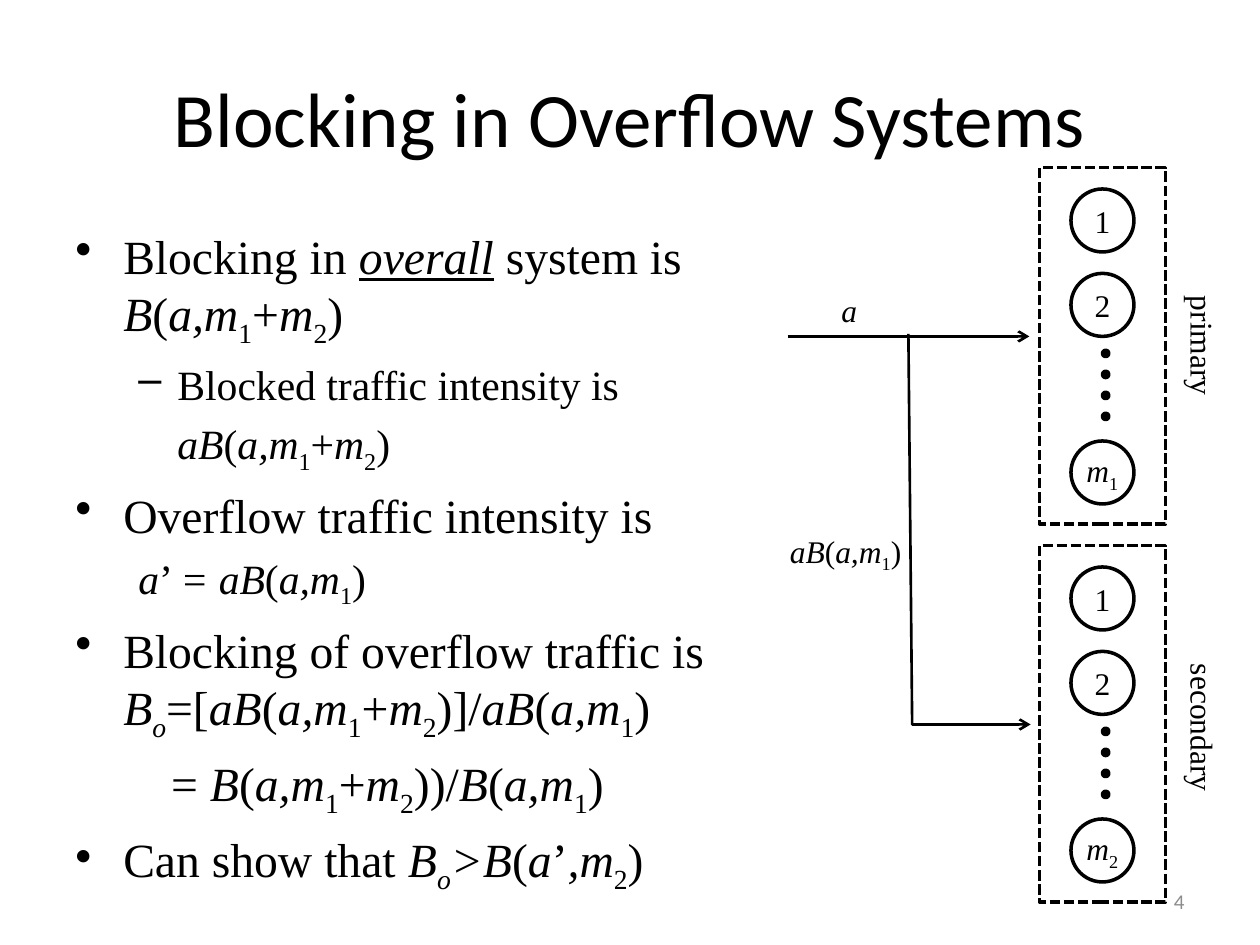
"""Build the slide on blocking in overflow systems."""
import pptx
import pptx.chart.data
import pptx.dml.color
import pptx.enum.dml
import pptx.enum.shapes
import pptx.enum.text
import pptx.oxml
import pptx.oxml.ns
import pptx.util
from dataclasses import dataclass

Inches = pptx.util.Inches
Pt = pptx.util.Pt
ALIGN = pptx.enum.text.PP_ALIGN
ANCHOR = pptx.enum.text.MSO_ANCHOR
SHAPE = pptx.enum.shapes.MSO_SHAPE


@dataclass(frozen=True)
class Theme:
    ink: str = "000000"
    paper: str = "FFFFFF"
    muted: str = "8C8C8C"
    heading: str = "Calibri"
    serif: str = "Times New Roman"
    title: float = 44
    point: float = 27.2
    detail: float = 23.8
    label: float = 18
    number: float = 12
    outline: float = 2
    arrow: float = 1.5


THEME = Theme()

TITLE = "Blocking in Overflow Systems"
PRIMARY = [("(", ""), ("a,m", "i"), ("1", "s"), (")", "")]
TOTAL = [("(", ""), ("a,m", "i"), ("1", "s"), ("+", ""), ("m", "i"), ("2", "s")]
B = ("B", "i")
AB = ("aB", "i")
B_OVERFLOW = [B, ("o", "is")]

POINTS = [
    ("•", THEME.point, 0.38, -0.38,
     [("Blocking in ", ""), ("overall", "iu"), (" system is ", ""), B, *TOTAL, (")", "")]),
    ("–", THEME.detail, 0.81, -0.31, [("Blocked traffic intensity is", "")]),
    (None, THEME.detail, 0.81, 0, [AB, *TOTAL, (")", "")]),
    ("•", THEME.point, 0.38, -0.38, [("Overflow traffic intensity is", "")]),
    (None, THEME.detail, 0.5, 0, [("a", "i"), ("’ ", ""), ("= aB", "i"), *PRIMARY]),
    ("•", THEME.point, 0.38, -0.38,
     [("Blocking of overflow traffic is ", ""), *B_OVERFLOW, ("=[", ""), AB, *TOTAL,
      (")]/", ""), AB, *PRIMARY]),
    (None, THEME.point, 0.76, 0,
     [("=", ""), (" B", "i"), *TOTAL, ("))/", ""), B, *PRIMARY]),
    ("•", THEME.point, 0.38, -0.38,
     [("Can show that ", ""), *B_OVERFLOW, (">B", "i"), ("(", ""), ("a", "i"),
      ("’", ""), (",m", "i"), ("2", "s"), (")", "")]),
]

SERVER_GROUPS = [("1", 1.33), ("2", 4.33)]
LABELS = [
    ((6.58, 2.26, 0.5, 0.4), [("a", "i")], False),
    ((6.17, 4.17, 1.25, 0.4), [AB, *PRIMARY], False),
    ((9.25, 2.25, 0.5, 1), [("primary", "")], True),
    ((9.25, 5.17, 0.5, 1.25), [("secondary", "")], True),
]
ARRIVALS = (6.25, 2.67, 8.17, 2.67)
OVERFLOW = [(7.21, 2.65), (7.24, 5.75), (8.18, 5.75)]


def rgb(value):
    return pptx.dml.color.RGBColor.from_string(value)


def add_runs(para, runs, size, font=THEME.serif, color=THEME.ink):
    for text, style in runs:
        span = para.add_run()
        span.text = text
        span.font.name = font
        span.font.size = Pt(size)
        span.font.color.rgb = rgb(color)
        span.font.italic = "i" in style
        span.font.underline = "u" in style
        if "s" in style:
            span.font._element.set("baseline", "-25000")


def add_text(page, place, runs, size, align=ALIGN.LEFT, anchor=ANCHOR.TOP, **look):
    box = page.shapes.add_textbox(*map(Inches, place))
    frame = box.text_frame
    frame.word_wrap = True
    frame.vertical_anchor = anchor
    frame.paragraphs[0].alignment = align
    add_runs(frame.paragraphs[0], runs, size, **look)
    return box


def add_points(page):
    frame = add_text(page, (0.5, 1.75, 5.75, 5.42), [], THEME.point).text_frame
    for index, (bullet, size, margin, indent, runs) in enumerate(POINTS):
        para = frame.add_paragraph() if index else frame.paragraphs[0]
        para.space_before = Pt(round(size * 0.23, 1))
        props = para._p.get_or_add_pPr()
        props.set("marL", str(Inches(margin)))
        props.set("indent", str(Inches(indent)))
        if bullet:
            mark = pptx.oxml.parse_xml(
                f'<a:buChar {pptx.oxml.ns.nsdecls("a")} char="{bullet}"/>')
            props.append(mark)
        add_runs(para, runs, size)


def add_outlined(group, kind, place, fill=None):
    shape = group.shapes.add_shape(kind, *map(Inches, place))
    shape.shadow.inherit = False
    if fill:
        shape.fill.solid()
        shape.fill.fore_color.rgb = rgb(fill)
    else:
        shape.fill.background()
    shape.line.color.rgb = rgb(THEME.ink)
    shape.line.width = Pt(THEME.outline)
    return shape


def add_servers(page, subscript, top):
    group = page.shapes.add_group_shape()
    servers = [([("1", "")], 0.17), ([("2", "")], 0.84),
               ([("m", "i"), (subscript, "s")], 2.17)]
    for runs, drop in servers:
        server = add_outlined(group, SHAPE.OVAL, (8.5, top + drop, 0.5, 0.5), THEME.paper)
        frame = server.text_frame
        frame.margin_left = frame.margin_right = 0
        frame.vertical_anchor = ANCHOR.MIDDLE
        frame.paragraphs[0].alignment = ALIGN.CENTER
        add_runs(frame.paragraphs[0], runs, THEME.label)
    for step in range(4):
        add_outlined(group, SHAPE.OVAL, (8.75, top + 1.45 + step / 6, 0.05, 0.05), THEME.ink)
    border = add_outlined(group, SHAPE.RECTANGLE, (8.25, top, 1, 2.83))
    border.line.dash_style = pptx.enum.dml.MSO_LINE.SQUARE_DOT


def style_arrow(arrow):
    arrow.line.color.rgb = rgb(THEME.ink)
    arrow.line.width = Pt(THEME.arrow)
    names = pptx.oxml.ns.nsdecls("a")
    arrow.line._get_or_add_ln().append(
        pptx.oxml.parse_xml(f'<a:tailEnd {names} type="arrow"/>'))
    arrow._element.spPr.append(pptx.oxml.parse_xml(f"<a:effectLst {names}/>"))


def add_arrows(page):
    style_arrow(page.shapes.add_connector(
        pptx.enum.shapes.MSO_CONNECTOR.STRAIGHT, *map(Inches, ARRIVALS)))
    start, *turns = [(Inches(x), Inches(y)) for x, y in OVERFLOW]
    builder = page.shapes.build_freeform(*start)
    builder.add_line_segments(turns, close=False)
    route = builder.convert_to_shape()
    route.fill.background()
    style_arrow(route)


def main():
    deck = pptx.Presentation()
    deck.slide_width, deck.slide_height = Inches(10), Inches(7.5)
    page = deck.slides.add_slide(deck.slide_layouts[6])
    add_text(page, (0.5, 0.3, 9, 1.25), [(TITLE, "")], THEME.title,
             ALIGN.CENTER, ANCHOR.MIDDLE, font=THEME.heading)
    add_points(page)
    add_text(page, (7.17, 6.95, 2.33, 0.4), [("4", "")], THEME.number,
             ALIGN.RIGHT, ANCHOR.MIDDLE, font=THEME.heading, color=THEME.muted)
    for subscript, top in SERVER_GROUPS:
        add_servers(page, subscript, top)
    add_arrows(page)
    for place, runs, vertical in LABELS:
        label = add_text(page, place, runs, THEME.label)
        if vertical:
            label.text_frame._txBody.bodyPr.set("vert", "vert")
    deck.save("out.pptx")


if __name__ == "__main__":
    main()
